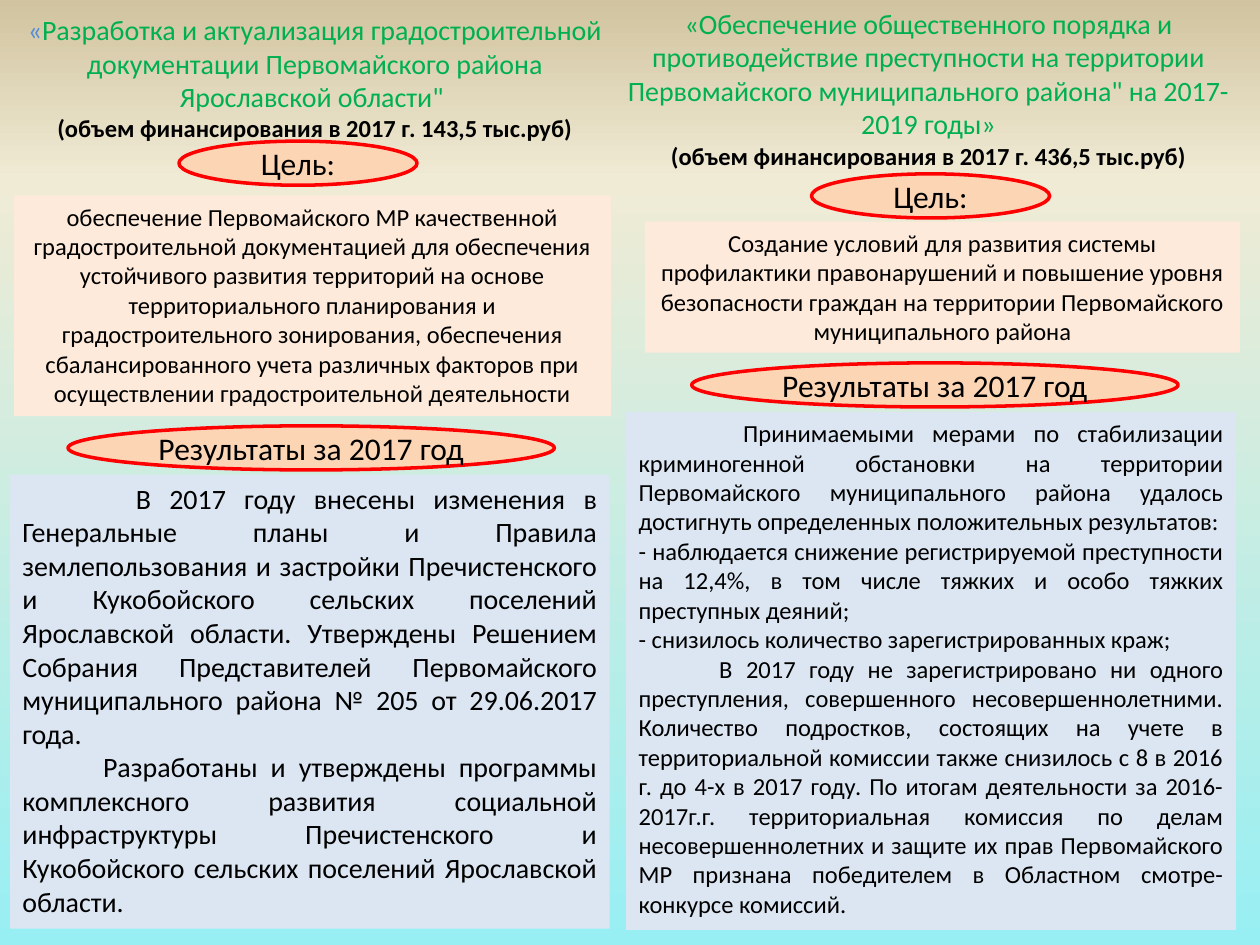
from copy import deepcopy
from dataclasses import dataclass
from typing import Any

from pptx import Presentation
from pptx.dml.color import RGBColor
from pptx.enum.shapes import MSO_SHAPE as Kind
from pptx.enum.text import MSO_ANCHOR as Anchor, PP_ALIGN as Align
from pptx.oxml.ns import qn
from pptx.util import Inches, Pt

GREEN, BLUE, BLACK, RED = "00B050", "558ED5", "000000", "FF0000"
PEACH, CREAM, PALE = "FCD5B5", "FDEADA", "DCE6F2"
STOPS = [(0, "97EFF3"), (0.81, "F0EBD5"), (1, "D1C39F")]

Box = tuple[float, float, float, float]


@dataclass
class Para:
    text: str
    indent: float = 0


@dataclass
class Column:
    title: str
    mark: str
    funds: str
    head: Box
    goal: str
    aim: Box
    aim_tag: Box
    body: list[Para]
    size: int
    done: Box
    done_tag: Box


COLUMNS = [
    Column(
        title="Разработка и актуализация градостроительной документации "
              "Первомайского района Ярославской области\" ",
        mark=BLUE,
        funds="(объем финансирования в 2017 г. 143,5 тыс.руб)",
        head=(0, 0.05, 5, 1.14),
        goal="обеспечение Первомайского МР качественной градостроительной "
             "документацией для обеспечения устойчивого развития территорий на основе "
             "территориального планирования и градостроительного зонирования, "
             "обеспечения сбалансированного учета различных факторов при "
             "осуществлении градостроительной деятельности",
        aim=(0.11, 1.55, 4.74, 1.75),
        aim_tag=(1.42, 1.12, 1.89, 0.35),
        body=[
            Para("В 2017 году внесены изменения в Генеральные планы и Правила "
                 "землепользования и застройки Пречистенского и Кукобойского сельских "
                 "поселений Ярославской области. Утверждены Решением Собрания "
                 "Представителей Первомайского муниципального района № 205 от "
                 "29.06.2017 года.", 0.9),
            Para("Разработаны и утверждены программы комплексного развития социальной "
                 "инфраструктуры Пречистенского и Кукобойского сельских поселений "
                 "Ярославской области.", 0.64),
        ],
        size=16,
        done=(0.08, 3.77, 4.76, 3.6),
        done_tag=(0.54, 3.38, 3.86, 0.35),
    ),
    Column(
        title="Обеспечение общественного порядка и противодействие преступности на "
              "территории Первомайского муниципального района\" на 2017-2019 годы»",
        mark=GREEN,
        funds="(объем финансирования в 2017 г. 436,5 тыс.руб)",
        head=(4.87, 0, 5, 1.41),
        goal="Создание условий для развития системы профилактики правонарушений и "
             "повышение уровня безопасности граждан на территории Первомайского "
             "муниципального района",
        aim=(5.12, 1.76, 4.72, 1.04),
        aim_tag=(6.44, 1.38, 1.89, 0.35),
        body=[
            Para("Принимаемыми мерами по стабилизации криминогенной обстановки на "
                 "территории Первомайского муниципального района удалось достигнуть "
                 "определенных положительных результатов:", 0.83),
            Para("- наблюдается снижение регистрируемой преступности на 12,4%, в том "
                 "числе тяжких и особо тяжких преступных деяний;"),
            Para("- снизилось количество зарегистрированных краж;"),
            Para("В 2017 году не зарегистрировано ни одного преступления, совершенного "
                 "несовершеннолетними. Количество подростков, состоящих на учете в "
                 "территориальной комиссии также снизилось с 8 в 2016 г. до 4-х в "
                 "2017 году. По итогам деятельности за 2016-2017г.г. территориальная "
                 "комиссия по делам несовершеннолетних и защите их прав Первомайского "
                 "МР признана победителем в Областном смотре-конкурсе комиссий.", 0.64),
        ],
        size=14,
        done=(4.97, 3.27, 4.84, 4.11),
        done_tag=(5.49, 2.88, 3.86, 0.35),
    ),
]


def tint(code: str) -> RGBColor:
    """Turn a hex string into a colour."""
    return RGBColor.from_string(code)


def write(para: Any, text: str, *, size: int, color: str = BLACK, bold: bool = False,
          align: Align = Align.CENTER, indent: float = 0) -> None:
    """Add a formatted run to a paragraph."""
    para.alignment = align
    if indent:
        para._p.get_or_add_pPr().set("indent", str(Inches(indent)))
    run = para.add_run()
    run.text = text
    font = run.font
    font.name, font.size, font.bold = "Calibri", Pt(size), bold
    font.color.rgb = tint(color)


def draw(slide: Any, kind: Kind, box: Box, fill: str, line: str = "") -> Any:
    """Draw a filled shape and return its text frame."""
    shape = slide.shapes.add_shape(kind, *map(Inches, box))
    shape.shadow.inherit = False
    shape.fill.solid()
    shape.fill.fore_color.rgb = tint(fill)
    if line:
        shape.line.color.rgb = tint(line)
        shape.line.width = Pt(2)
    else:
        shape.line.fill.background()
    frame = shape.text_frame
    frame.word_wrap = True
    frame.vertical_anchor = Anchor.MIDDLE if line else Anchor.TOP
    return frame


def tag(slide: Any, box: Box, text: str) -> None:
    """Draw an oval label."""
    frame = draw(slide, Kind.OVAL, box, PEACH, RED)
    write(frame.paragraphs[0], text, size=18)


def panel(slide: Any, box: Box, fill: str, paras: list[Para], size: int,
          align: Align = Align.CENTER) -> None:
    """Draw a rectangle holding paragraphs."""
    frame = draw(slide, Kind.RECTANGLE, box, fill)
    for i, item in enumerate(paras):
        para = frame.add_paragraph() if i else frame.paragraphs[0]
        write(para, item.text, size=size, align=align, indent=item.indent)


def heading(slide: Any, col: Column) -> None:
    """Write the title and funding of a column."""
    frame = slide.shapes.add_textbox(*map(Inches, col.head)).text_frame
    frame.word_wrap = True
    first = frame.paragraphs[0]
    write(first, "«", size=16, color=col.mark)
    write(first, col.title, size=16, color=GREEN)
    write(frame.add_paragraph(), col.funds, size=14, bold=True)


def backdrop(slide: Any) -> None:
    """Paint the vertical gradient behind the slide."""
    fill = slide.background.fill
    fill.gradient()
    fill.gradient_angle = 90
    stops = slide._element.find(".//" + qn("a:gsLst"))
    stops.append(deepcopy(stops[-1]))
    for stop, (place, code) in zip(fill.gradient_stops, STOPS):
        stop.position = place
        stop.color.rgb = tint(code)


def main() -> None:
    """Build and save the slide."""
    deck = Presentation()
    deck.slide_width, deck.slide_height = Inches(10), Inches(7.5)
    slide = deck.slides.add_slide(deck.slide_layouts[6])
    backdrop(slide)
    for col in COLUMNS:
        heading(slide, col)
        panel(slide, col.aim, CREAM, [Para(col.goal)], 14)
        tag(slide, col.aim_tag, "Цель:")
        panel(slide, col.done, PALE, col.body, col.size, Align.JUSTIFY)
        tag(slide, col.done_tag, "Результаты за 2017 год")
    deck.save("out.pptx")


if __name__ == "__main__":
    main()
